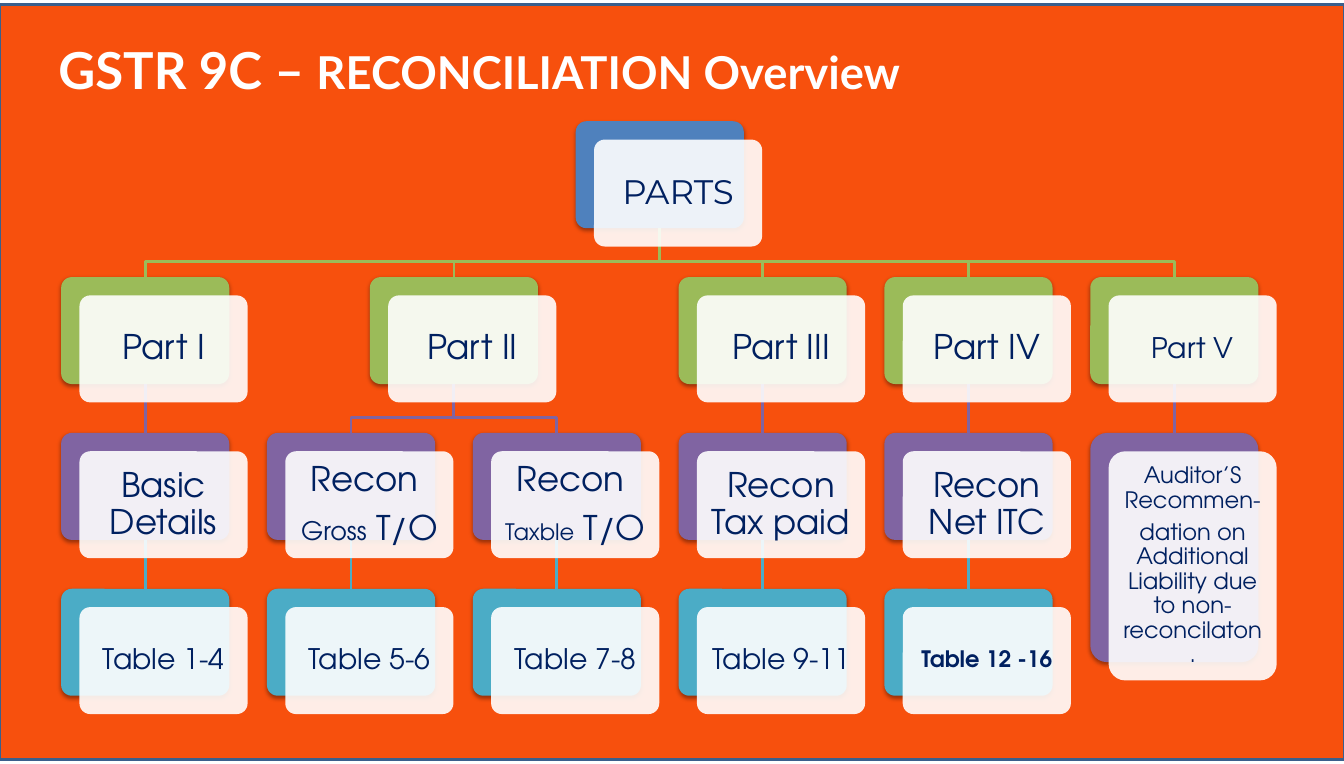
from lxml.etree import SubElement
from pptx import Presentation
from pptx.dml.color import RGBColor
from pptx.enum.shapes import MSO_CONNECTOR, MSO_SHAPE
from pptx.enum.text import MSO_ANCHOR, MSO_AUTO_SIZE, PP_ALIGN
from pptx.oxml.ns import qn
from pptx.util import Pt

PX = 9144  # 100 px to the inch
WHITE = RGBColor(0xFF, 0xFF, 0xFF)
ORANGE = RGBColor(0xF7, 0x50, 0x0D)
EDGE = RGBColor(0x3A, 0x5F, 0x8C)
NAVY = RGBColor(0x00, 0x20, 0x60)
BLUE = RGBColor(0x4F, 0x81, 0xBD)
GREEN = RGBColor(0x9B, 0xBB, 0x59)
PURPLE = RGBColor(0x80, 0x64, 0xA2)
TEAL = RGBColor(0x4B, 0xAC, 0xC6)
LEVELS = [BLUE, GREEN, PURPLE, TEAL]
HEAD, TOP, BODY = "Lato", "Montserrat", "TeX Gyre Adventor"

# Content: key, parent, column, level, paragraphs of (text, size) runs
TITLE = [("GSTR 9C – ", 36), ("RECONCILIATION Overview", 32)]
NODES = [
    ("top", None, 2.5, 0, [[("PARTS", 24)]]),
    ("p1", "top", 0, 1, [[("Part I", 24)]]),
    ("p2", "top", 1.5, 1, [[("Part II", 24)]]),
    ("p3", "top", 3, 1, [[("Part III", 24)]]),
    ("p4", "top", 4, 1, [[("Part IV", 24)]]),
    ("p5", "top", 5, 1, [[("Part V", 20)]]),
    ("basic", "p1", 0, 2, [[("Basic Details", 24)]]),
    ("gross", "p2", 1, 2, [[("Recon ", 24)], [("Gross", 18), (" T/O", 24)]]),
    ("taxble", "p2", 2, 2, [[("Recon ", 24)], [("Taxble", 16), (" T/O", 24)]]),
    ("paid", "p3", 3, 2, [[("Recon Tax paid", 24)]]),
    ("itc", "p4", 4, 2, [[("Recon Net ITC", 24)]]),
    ("audit", "p5", 5, 2, [
        [("Auditor’S Recommen-", 16)],
        [("dation on Additional Liability due to non-reconcilaton.", 16)]]),
    ("t1", "basic", 0, 3, [[("Table 1-4", 20)]]),
    ("t5", "gross", 1, 3, [[("Table 5-6", 20)]]),
    ("t7", "taxble", 2, 3, [[("Table 7-8", 20)]]),
    ("t9", "paid", 3, 3, [[("Table 9-11", 20)]]),
    ("t12", "itc", 4, 3, [[("Table 12 -16", 16)]]),
]
BOLD = {"t12"}
TALL = {"audit": 225}
INSETS = {24: 10, 20: 8, 16: 7}  # by text size

# Grid
LEFT, UPPER, STEP_X, STEP_Y = 60, 119, 202, 153
WIDE, HIGH, SHIFT, DROP = 165, 105, 18, 33


def fill_runs(para, runs, font, color, bold):
    para.alignment = PP_ALIGN.CENTER
    for text, size in runs:
        run = para.add_run()
        run.text = text
        run.font.size, run.font.name = Pt(size), font
        run.font.bold = bold
        run.font.color.rgb = color


def add_box(slide, kind, x, y, w, h, color):
    box = slide.shapes.add_shape(kind, x * PX, y * PX, w * PX, h * PX)
    box.shadow.inherit = False
    box.fill.solid()
    box.fill.fore_color.rgb = color
    box.line.fill.background()
    return box


def add_round(slide, *args):
    box = add_box(slide, MSO_SHAPE.ROUNDED_RECTANGLE, *args)
    box.adjustments[0] = 0.1
    return box


def add_shade(box):
    effects = box._element.spPr.find(qn("a:effectLst"))
    shade = SubElement(effects, qn("a:outerShdw"), blurRad="39370",
                       dist="20320", dir="5400000", rotWithShape="0")
    black = SubElement(shade, qn("a:srgbClr"), val="000000")
    SubElement(black, qn("a:alpha"), val="38000")


def add_link(slide, above, below, color):
    start = above.left + above.width // 2, above.top + above.height
    end = below.left + below.width // 2, below.top
    if start[0] == end[0]:
        link = slide.shapes.add_connector(MSO_CONNECTOR.STRAIGHT, *start, *end)
        link.begin_connect(above, 2)
        link.end_connect(below, 0)
        SubElement(link._element.spPr, qn("a:effectLst"))
    else:
        bend = start[1] + DROP * PX
        path = slide.shapes.build_freeform(*start)
        path.add_line_segments(
            [(start[0], bend), (end[0], bend), end], close=False)
        link = path.convert_to_shape()
        link.shadow.inherit = False
        link.fill.background()
    link.line.color.rgb = color
    link.line.width = Pt(2)


def add_card(slide, x, y, h, paras, font, bold):
    card = add_round(slide, x, y, WIDE, h, WHITE)
    tint = card._element.spPr.find(qn("a:solidFill"))[0]
    SubElement(tint, qn("a:alpha"), val="90000")
    frame = card.text_frame
    frame.word_wrap = True
    frame.vertical_anchor = MSO_ANCHOR.MIDDLE
    inset = INSETS[paras[0][0][1]] * PX
    frame.margin_left = frame.margin_right = inset
    frame.margin_top = frame.margin_bottom = inset
    for i, runs in enumerate(paras):
        para = frame.add_paragraph() if i else frame.paragraphs[0]
        para.line_spacing = 0.9
        para.space_after = Pt(0.35 * runs[-1][1])
        fill_runs(para, runs, font, NAVY, bold)


def main():
    deck = Presentation()
    deck.slide_width, deck.slide_height = 1319 * PX, 750 * PX
    slide = deck.slides.add_slide(deck.slide_layouts[5])

    # Backdrop, behind the title
    back = add_box(slide, MSO_SHAPE.RECTANGLE, 0, 4, 1319, 742, ORANGE)
    back.line.color.rgb = EDGE
    back.line.width = Pt(2)
    slide.shapes._spTree.insert(2, back._element)

    # Title
    title = slide.shapes.title
    title.left, title.top = 6 * PX, 29 * PX
    title.width, title.height = 929 * PX, 77 * PX
    frame = title.text_frame
    frame.auto_size = MSO_AUTO_SIZE.NONE
    frame.vertical_anchor = MSO_ANCHOR.MIDDLE
    fill_runs(frame.paragraphs[0], TITLE, HEAD, WHITE, True)

    # Coloured boxes
    boxes, spots = {}, {}
    for key, _, col, level, _ in NODES:
        x, y = LEFT + int(STEP_X * col), UPPER + STEP_Y * level
        spots[key] = x, y, TALL.get(key, HIGH)
        boxes[key] = add_round(slide, x, y, WIDE, spots[key][2], LEVELS[level])
        add_shade(boxes[key])

    # Links
    for key, parent, _, level, _ in NODES:
        if parent:
            add_link(slide, boxes[parent], boxes[key], LEVELS[level])

    # White cards
    for key, _, _, level, paras in NODES:
        x, y, h = spots[key]
        font = BODY if level else TOP
        add_card(slide, x + SHIFT, y + SHIFT, h, paras, font, key in BOLD)

    deck.save("out.pptx")


if __name__ == "__main__":
    main()
